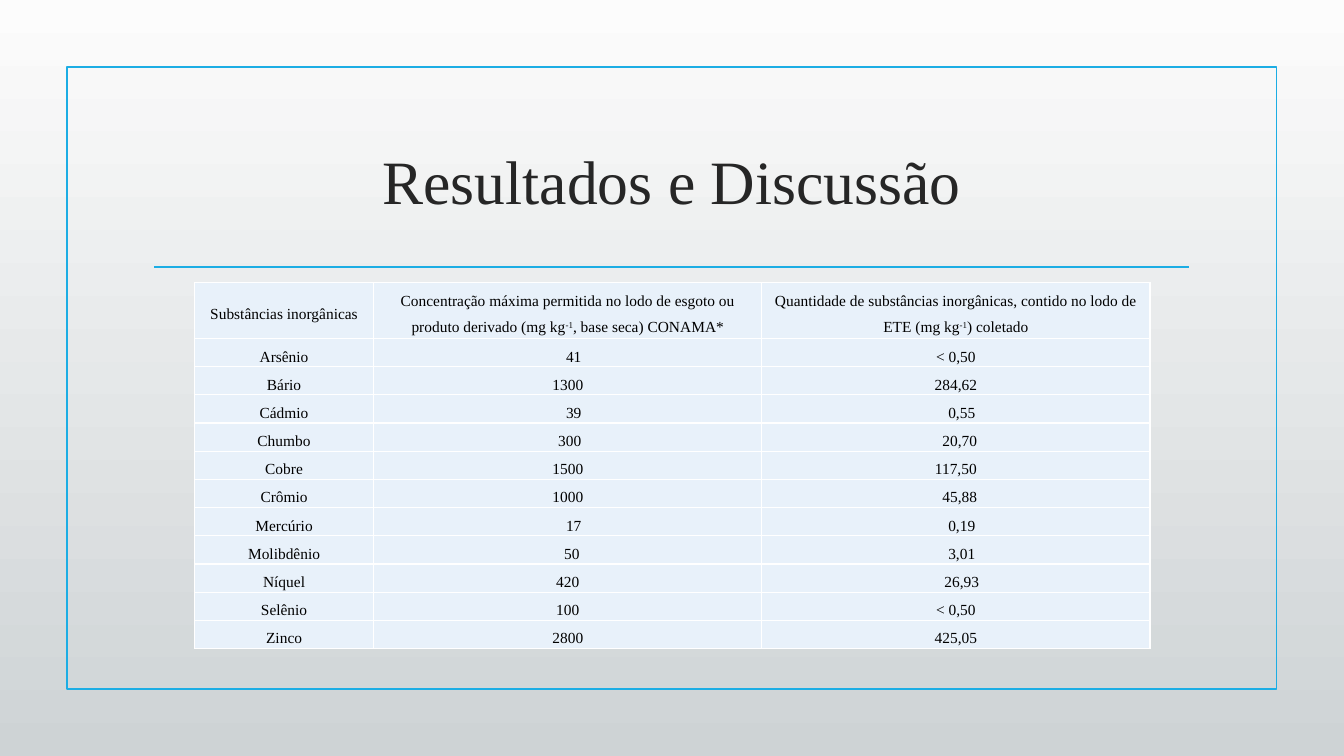
from dataclasses import dataclass
from lxml.etree import SubElement as Sub
from pptx import Presentation
from pptx.dml.color import RGBColor as Rgb
from pptx.enum.shapes import MSO_CONNECTOR as Conn, MSO_SHAPE as Form
from pptx.enum.text import MSO_ANCHOR as Anchor, MSO_AUTO_SIZE as Auto, PP_ALIGN as Align
from pptx.oxml.ns import qn
from pptx.util import Cm, Pt


@dataclass(frozen=True)
class Theme:
    face: str = "Times New Roman"
    accent: Rgb = Rgb(0x1C, 0xAD, 0xE4)
    title: Rgb = Rgb(0x26, 0x26, 0x26)
    ink: Rgb = Rgb(0, 0, 0)
    cell: Rgb = Rgb(0xE8, 0xF1, 0xFA)
    border: str = "FFFFFF"
    top: Rgb = Rgb(0xFC, 0xFC, 0xFC)
    base: Rgb = Rgb(0xCE, 0xD3, 0xD5)
    big: Pt = Pt(44)
    small: Pt = Pt(11)
    line: Pt = Pt(1.25)
    thin: Pt = Pt(1)


THEME = Theme()
COLS = (4.52, 9.78, 9.78)
HEAD, ROW = 1.42, 0.71
SPACE = 0.1
ROWS = (
    ("Substâncias inorgânicas",
     "Concentração máxima permitida no lodo de esgoto ou produto derivado (mg kg|-1|, base seca) CONAMA*",
     "Quantidade de substâncias inorgânicas, contido no lodo de ETE (mg kg|-1|) coletado"),
    ("Arsênio", "41", "< 0,50"),
    ("Bário", "1300", "284,62"),
    ("Cádmio", "39", "0,55"),
    ("Chumbo", "300", "20,70"),
    ("Cobre", "1500", "117,50"),
    ("Crômio", "1000", "45,88"),
    ("Mercúrio", "17", "0,19"),
    ("Molibdênio", "50", "3,01"),
    ("Níquel", "420", "26,93"),
    ("Selênio", "100", "< 0,50"),
    ("Zinco", "2800", "425,05"),
)
SHIFT = {"41": 3, "39": 3, "17": 3, "50": 2, "300": 1,
         "0,55": 3, "0,19": 3, "3,01": 3, "26,93": 3, "20,70": 2, "45,88": 2}


def style(run, size, color):
    run.font.name = THEME.face
    run.font.size = size
    run.font.color.rgb = color


def paint(slide):
    fill = slide.background.fill
    fill.gradient()
    fill.gradient_angle = 270
    for stop, color in zip(fill.gradient_stops, (THEME.top, THEME.base)):
        stop.color.rgb = color


def frame(slide, left, top, width, height):
    box = slide.shapes.add_shape(Form.RECTANGLE, Cm(left), Cm(top), Cm(width), Cm(height))
    box.shadow.inherit = False
    box.fill.background()
    inset = 2.2
    y = Cm(top + 5.04)
    rule = slide.shapes.add_connector(
        Conn.STRAIGHT, Cm(left + inset), y, Cm(left + width - inset), y)
    Sub(rule._element.spPr, qn("a:effectLst"))
    for shape in (box, rule):
        shape.line.color.rgb = THEME.accent
        shape.line.width = THEME.line


def heading(slide, left, top, width, height):
    title = slide.shapes.title
    title.left, title.top, title.width, title.height = map(Cm, (left, top, width, height))
    text = title.text_frame
    text.text = "Resultados e Discussão"
    text.word_wrap = True
    text.auto_size = Auto.NONE
    text.vertical_anchor = Anchor.MIDDLE
    para = text.paragraphs[0]
    para.alignment = Align.CENTER
    style(para.runs[0], THEME.big, THEME.title)


def edge(cell):
    props = cell._tc.get_or_add_tcPr()
    for side in ("lnL", "lnR", "lnT", "lnB"):
        line = Sub(props, qn("a:" + side), w=str(THEME.thin))
        Sub(Sub(line, qn("a:solidFill")), qn("a:srgbClr"), val=THEME.border)


def write(cell, text):
    edge(cell)
    cell.fill.solid()
    cell.fill.fore_color.rgb = THEME.cell
    cell.vertical_anchor = Anchor.MIDDLE
    cell.margin_left = cell.margin_right = Cm(0.18)
    cell.margin_top = cell.margin_bottom = 0
    para = cell.text_frame.paragraphs[0]
    para.alignment = Align.CENTER
    para.line_spacing = 1.5
    if text in SHIFT:
        props = para._p.get_or_add_pPr()
        props.set("marL", str(Cm(SHIFT[text] * SPACE)))
        props.set("indent", "0")
    for n, part in enumerate(text.split("|")):
        run = para.add_run()
        run.text = part
        style(run, THEME.small, THEME.ink)
        if n == 1:
            run._r.get_or_add_rPr().set("baseline", "30000")


def grid(slide, left, top):
    high = HEAD + ROW * (len(ROWS) - 1)
    table = slide.shapes.add_table(
        len(ROWS), len(COLS), Cm(left), Cm(top), Cm(sum(COLS)), Cm(high)).table
    table.first_row = table.horz_banding = False
    for col, width in zip(table.columns, COLS):
        col.width = Cm(width)
    for n, (row, texts) in enumerate(zip(table.rows, ROWS)):
        row.height = Cm(ROW if n else HEAD)
        for cell, text in zip(row.cells, texts):
            write(cell, text)


def main():
    deck = Presentation()
    deck.slide_width, deck.slide_height = Cm(33.87), Cm(19.05)
    slide = deck.slides.add_slide(deck.slide_layouts[5])
    paint(slide)
    frame(slide, 1.69, 1.69, 30.48, 15.67)
    heading(slide, 3.6, 2.72, 26.67, 3.63)
    grid(slide, 4.9, 7.11)
    deck.save("out.pptx")


if __name__ == "__main__":
    main()
